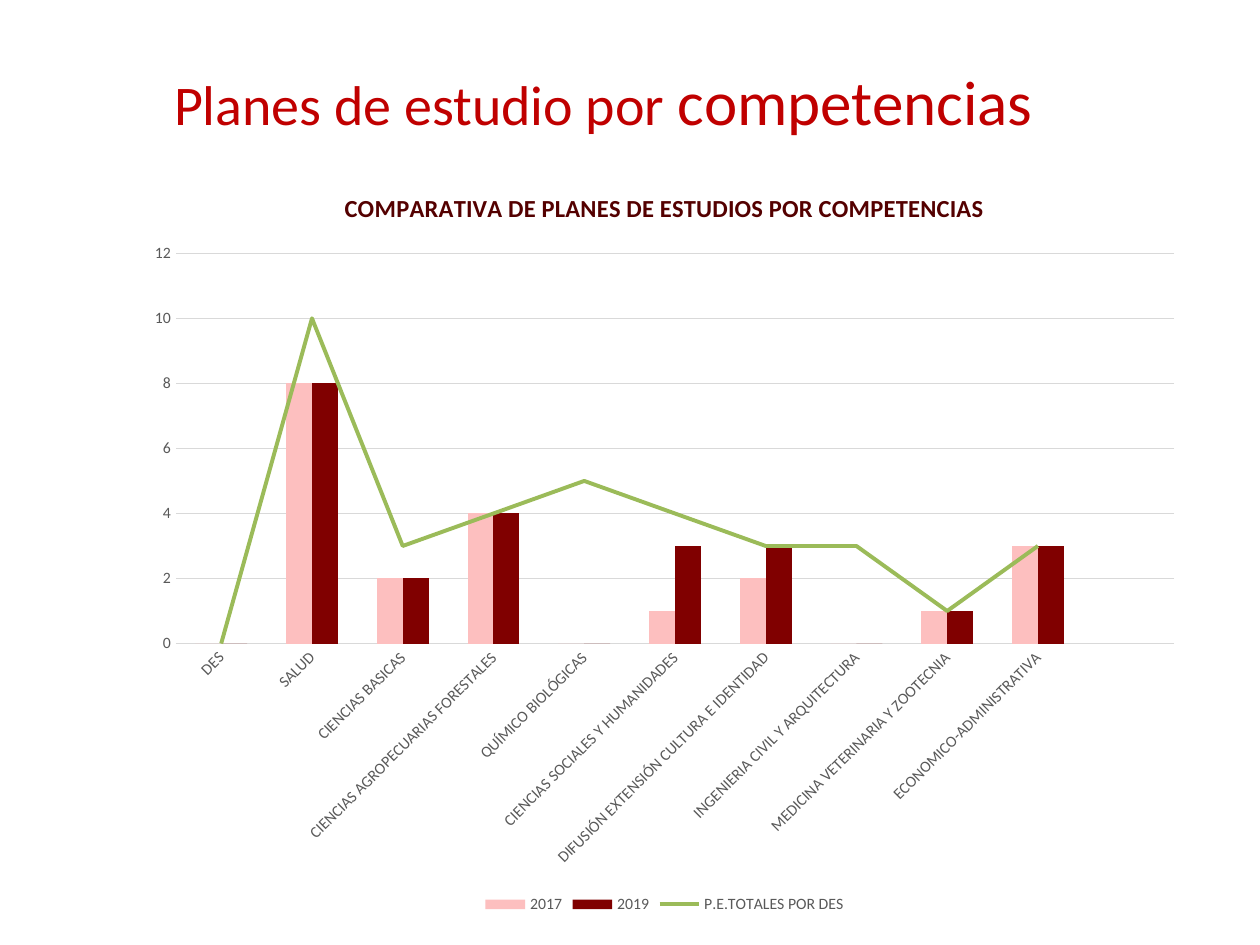
from lxml import etree
from pptx import Presentation
from pptx.chart.data import CategoryChartData
from pptx.dml.color import RGBColor
from pptx.enum.chart import XL_CHART_TYPE, XL_LEGEND_POSITION, XL_TICK_MARK
from pptx.enum.text import MSO_ANCHOR, MSO_AUTO_SIZE, PP_ALIGN
from pptx.oxml import parse_xml
from pptx.oxml.ns import nsdecls, qn
from pptx.util import Cm, Pt

RED = RGBColor(0xC0, 0x00, 0x00)
MAROON = RGBColor(0x54, 0x00, 0x00)
PINK = RGBColor(0xFD, 0xBF, 0xBF)
DARK_RED = RGBColor(0x80, 0x00, 0x00)
GREEN = RGBColor(0x9B, 0xBB, 0x59)
GRAY = RGBColor(0x59, 0x59, 0x59)
LIGHT_GRAY = RGBColor(0xD9, 0xD9, 0xD9)
BLACK = RGBColor(0x00, 0x00, 0x00)

# Area, plans in 2017, plans in 2019, total plans; the last slot stays empty
PLANS = [
    ("DES", 0, 0, 0),
    ("SALUD", 8, 8, 10),
    ("CIENCIAS BASICAS", 2, 2, 3),
    ("CIENCIAS AGROPECUARIAS FORESTALES", 4, 4, 4),
    ("QUÍMICO BIOLÓGICAS", 0, 0, 5),
    ("CIENCIAS SOCIALES Y HUMANIDADES", 1, 3, 4),
    ("DIFUSIÓN EXTENSIÓN CULTURA E IDENTIDAD", 2, 3, 3),
    ("INGENIERIA CIVIL Y ARQUITECTURA", 0, 0, 3),
    ("MEDICINA VETERINARIA Y ZOOTECNIA", 1, 1, 1),
    ("ECONOMICO-ADMINISTRATIVA", 3, 3, 3),
    ("", None, None, None),
]


class PlansSlide:
    font_name = "Calibri"

    def __init__(self, presentation):
        self.slide = presentation.slides.add_slide(presentation.slide_layouts[5])

    def style(self, font, size, color, bold=False):
        font.name = self.font_name
        font.size = Pt(size)
        font.bold = bold
        font.color.rgb = color

    def add_title(self, parts, left, top, width, height):
        title = self.slide.shapes.title
        title.left, title.top, title.width, title.height = left, top, width, height
        frame = title.text_frame
        frame.word_wrap = True
        frame.auto_size = MSO_AUTO_SIZE.NONE
        frame.vertical_anchor = MSO_ANCHOR.MIDDLE
        paragraph = frame.paragraphs[0]
        paragraph.alignment = PP_ALIGN.CENTER
        for text, size in parts:
            run = paragraph.add_run()
            run.text = text
            self.style(run.font, size, RED)

    def add_plans_chart(self, heading, left, top, width, height):
        areas, plans_2017, plans_2019, totals = zip(*PLANS)
        data = CategoryChartData(number_format="General")
        data.categories = areas
        data.add_series("2017", plans_2017)
        data.add_series("2019", plans_2019)
        data.add_series("P.E.TOTALES POR DES", totals)
        chart = self.slide.shapes.add_chart(
            XL_CHART_TYPE.COLUMN_CLUSTERED, left, top, width, height, data).chart
        self.style(chart.font, 10, BLACK)

        chart.has_title = True
        chart.chart_title.include_in_layout = False
        heading_paragraph = chart.chart_title.text_frame.paragraphs[0]
        heading_paragraph.text = heading
        self.style(heading_paragraph.font, 14, MAROON, bold=True)

        chart.has_legend = True
        chart.legend.position = XL_LEGEND_POSITION.BOTTOM
        chart.legend.include_in_layout = False
        self.style(chart.legend.font, 9, GRAY)

        columns = chart.plots[0]
        columns.gap_width = 150
        columns.overlap = 0
        columns.vary_by_categories = False
        for series, color in zip(columns.series, (PINK, DARK_RED)):
            series.format.fill.solid()
            series.format.fill.fore_color.rgb = color
        self.turn_last_series_into_line(chart)
        self.format_axes(chart)
        self.place_plot(chart, x=0.04, y=0.117, w=0.94, h=0.518)

    def turn_last_series_into_line(self, chart):
        bars = chart.plots[0]._element
        series = bars.findall(qn("c:ser"))[-1]
        for bar_setting in series.findall(qn("c:invertIfNegative")):
            series.remove(bar_setting)
        line_plot = parse_xml(
            f'<c:lineChart {nsdecls("c")}><c:grouping val="standard"/>'
            '<c:varyColors val="0"/><c:marker val="1"/></c:lineChart>')
        line_plot.insert(2, series)
        series.find(qn("c:cat")).addprevious(parse_xml(
            f'<c:marker {nsdecls("c")}><c:symbol val="none"/></c:marker>'))
        for axis_id in bars.findall(qn("c:axId")):
            etree.SubElement(line_plot, qn("c:axId")).set("val", axis_id.get("val"))
        bars.addnext(line_plot)

        totals = chart.plots[1].series[0]
        totals.smooth = False
        totals.format.line.color.rgb = GREEN
        totals.format.line.width = Pt(2.25)

    def format_axes(self, chart):
        areas, counts = chart.category_axis, chart.value_axis
        for axis in (areas, counts):
            axis.major_tick_mark = axis.minor_tick_mark = XL_TICK_MARK.NONE
            self.style(axis.tick_labels.font, 9, GRAY)
        areas._element.find(qn("c:txPr")).find(qn("a:bodyPr")).set("rot", "-2700000")
        counts.minimum_scale, counts.maximum_scale, counts.major_unit = 0, 12, 2
        counts.has_major_gridlines = True
        counts.format.line.fill.background()
        for line in (areas.format.line, counts.major_gridlines.format.line):
            line.color.rgb = LIGHT_GRAY
            line.width = Pt(0.75)

    def place_plot(self, chart, **fractions):
        """Fix the inner plot area, in fractions of the chart's size."""
        plot_area = chart.plots[0]._element.getparent()
        for layout in plot_area.findall(qn("c:layout")):
            plot_area.remove(layout)
        layout = etree.Element(qn("c:layout"))
        manual = etree.SubElement(layout, qn("c:manualLayout"))
        settings = {"layoutTarget": "inner", "xMode": "edge", "yMode": "edge", **fractions}
        for tag, value in settings.items():
            etree.SubElement(manual, qn(f"c:{tag}")).set("val", str(value))
        plot_area.insert(0, layout)


def main():
    presentation = Presentation()
    presentation.slide_width, presentation.slide_height = Cm(25.4), Cm(19.05)
    plans = PlansSlide(presentation)
    plans.add_title([("Planes de estudio por ", 32), ("competencias ", 36)],
                    Cm(1.7), Cm(1.12), Cm(21.21), Cm(1.8))
    plans.add_plans_chart("COMPARATIVA DE PLANES DE ESTUDIOS POR COMPETENCIAS",
                          Cm(2.69), Cm(3.33), Cm(21.41), Cm(15.19))
    presentation.save("out.pptx")


if __name__ == "__main__":
    main()
